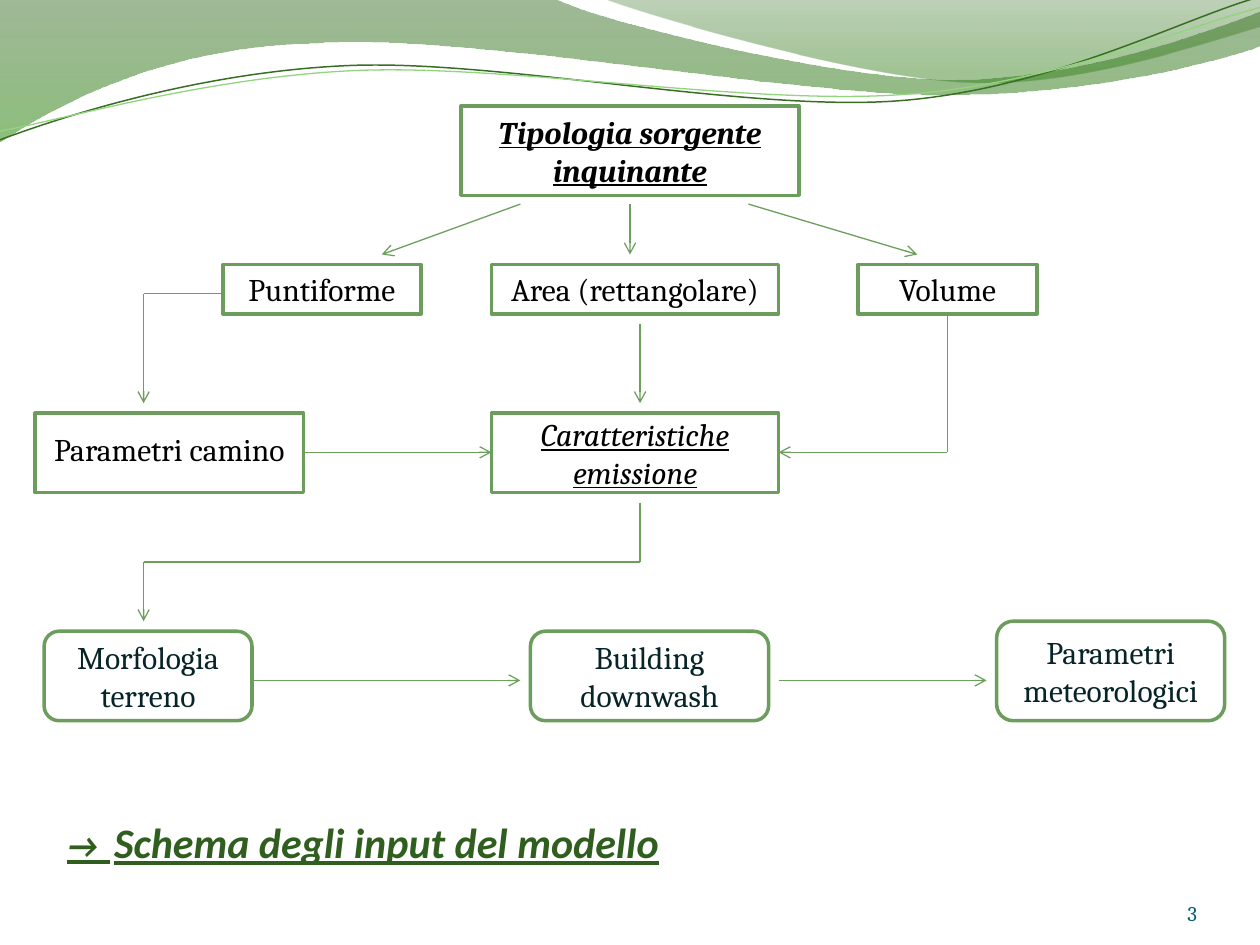
"""Build a slide that charts the inputs of a pollutant dispersion model."""
from dataclasses import dataclass
from itertools import chain, pairwise
from math import cos, radians, sin

from lxml import etree
from pptx import Presentation
from pptx.dml.color import RGBColor
from pptx.enum.shapes import MSO_CONNECTOR, MSO_SHAPE
from pptx.enum.text import MSO_ANCHOR, PP_ALIGN
from pptx.oxml.ns import qn
from pptx.util import Inches, Pt

PROCESS = MSO_SHAPE.FLOWCHART_PROCESS
RECTANGLE = MSO_SHAPE.RECTANGLE
ROUNDED = MSO_SHAPE.ROUNDED_RECTANGLE
STRAIGHT = MSO_CONNECTOR.STRAIGHT
TOP, MIDDLE, BOTTOM = MSO_ANCHOR.TOP, MSO_ANCHOR.MIDDLE, MSO_ANCHOR.BOTTOM
LEFT, CENTER, RIGHT = PP_ALIGN.LEFT, PP_ALIGN.CENTER, PP_ALIGN.RIGHT
WAVE_TILT = -2.7


@dataclass(frozen=True)
class Theme:
    """Colours, fonts and sizes of the slide."""
    body_font: str = "Cambria"
    title_font: str = "Calibri"
    text: str = "000000"
    soft_text: str = "072428"
    title: str = "2F5E1F"
    number: str = "045D75"
    border: str = "6D9D5D"
    arrow: str = "6C9E5C"
    dark_wave: str = "386F24"
    light_wave: str = "93D47E"
    box_size: int = 18
    title_size: int = 24
    mark_size: int = 20
    number_size: int = 12
    border_width: float = 2
    arrow_width: float = 0.75


THEME = Theme()
EMPHASIS = {"bold": True, "italic": True, "underline": True}
STRESS = {"italic": True, "underline": True}

FILLED_WAVES = [
    ((0, 0),
     [[(4.4, -0.01)],
      [(4.76, 0.17), (6.64, 0.63), (7.58, 0.63)],
      [(8.53, 0.63), (9.58, 0.26), (10, 0.09)],
      [(10.01, 0.36)],
      [(9.83, 0.44), (8.7, 0.76), (7.46, 0.75)],
      [(6.22, 0.75), (3.82, 0.28), (2.57, 0.34)],
      [(1.29, 0.36), (0.46, 0.83), (-0.01, 1.13)],
      [(0, 0)]],
     [(0, "2C6418", 45), (100, "2F8810", 55)]),
    ((4.79, -0.01),
     [[(5.09, 0.11), (6.82, 0.62), (7.69, 0.65)],
      [(8.56, 0.69), (9.61, 0.32), (10, 0.21)],
      [(10, 0)],
      [(4.79, -0.01)]],
     [(0, "2A6715", 30), (80, "307E15", 45)]),
]
LINE_WAVES = [
    ((0, 1.11),
     [[(0.48, 0.93), (1.58, 0.57), (2.77, 0.52)],
      [(3.95, 0.47), (5.93, 0.89), (7.13, 0.8)],
      [(8.33, 0.71), (9.38, 0.15), (9.98, -0.02)]], (4.99, 0.58), THEME.dark_wave, 0.85),
    ((0, 1.04),
     [[(0.47, 0.96), (1.64, 0.61), (2.83, 0.56)],
      [(4.03, 0.51), (5.97, 0.84), (7.17, 0.75)],
      [(8.36, 0.67), (9.41, 0.21), (10, 0.06)]], (5, 0.59), THEME.light_wave, 0.75),
]
BOXES = [
    (PROCESS, (3.66, 0.84, 2.68, 0.71), "Tipologia sorgente inquinante", THEME.text, EMPHASIS),
    (PROCESS, (1.77, 2.1, 1.57, 0.39), "Puntiforme", THEME.text, {}),
    (PROCESS, (3.9, 2.1, 2.28, 0.39), "Area (rettangolare)", THEME.text, {}),
    (PROCESS, (6.81, 2.1, 1.42, 0.39), "Volume", THEME.text, {}),
    (RECTANGLE, (0.28, 3.28, 2.13, 0.63), "Parametri camino", THEME.text, {}, 0.11),
    (RECTANGLE, (3.9, 3.28, 2.28, 0.63), "Caratteristiche emissione", THEME.text, STRESS),
    (ROUNDED, (4.21, 5.01, 1.89, 0.71), "Building downwash", THEME.soft_text, {}),
    (ROUNDED, (0.35, 5.01, 1.65, 0.71), "Morfologia terreno", THEME.soft_text, {}),
    (ROUNDED, (7.91, 4.93, 1.81, 0.79), "Parametri meteorologici", THEME.soft_text, {}),
]
ROUTES = [
    [(4.13, 1.62), (3.03, 2.02)],
    [(5, 1.62), (5, 2.02)],
    [(5.94, 1.62), (7.28, 2.02)],
    [(1.77, 2.33), (1.14, 2.33), (1.14, 3.2)],
    [(2.4, 3.59), (3.9, 3.59)],
    [(5.08, 2.57), (5.08, 3.2)],
    [(7.52, 2.49), (7.52, 3.59), (6.18, 3.59)],
    [(5.08, 3.99), (5.08, 4.46), (1.14, 4.46), (1.14, 4.93)],
    [(2.01, 5.4), (4.13, 5.4)],
    [(6.18, 5.4), (7.83, 5.4)],
]


def apply(target, values):
    """Set each attribute named in values on target."""
    for name, value in values.items():
        setattr(target, name, value)


def turn(point, center, degrees):
    """Return a point turned clockwise about a center."""
    angle = radians(degrees)
    across, down = point[0] - center[0], point[1] - center[1]
    return (center[0] + across * cos(angle) - down * sin(angle),
            center[1] + across * sin(angle) + down * cos(angle))


class SlideBuilder:
    """Draw styled elements on one slide."""

    def __init__(self, slide, theme):
        """Keep the slide and its theme."""
        self.slide, self.theme = slide, theme

    def outline(self, shape, color, width):
        """Give a shape a solid line."""
        shape.line.color.rgb = RGBColor.from_string(color)
        shape.line.width = Pt(width)

    def wave(self, start, segments, closed):
        """Add a freeform whose three-point segments are cubic curves."""
        points = [(Inches(x), Inches(y)) for x, y in chain([start], *segments)]
        builder = self.slide.shapes.build_freeform(*points[0])
        builder.add_line_segments(points[1:], close=closed)
        shape = builder.convert_to_shape()
        shape.shadow.inherit = False
        steps = iter(list(shape._element.iter(qn("a:lnTo"))))
        for segment in segments:
            first, *others = [next(steps) for _ in segment]
            if others:
                curve = etree.Element(qn("a:cubicBezTo"))
                first.addprevious(curve)
                for step in (first, *others):
                    curve.append(step[0])
                    step.getparent().remove(step)
        return shape

    def filled_wave(self, start, segments, stops):
        """Add a wave with a translucent vertical gradient."""
        shape = self.wave(start, segments, True)
        shape.line.fill.background()
        shape.fill.gradient()
        shape.fill.gradient_angle = 270
        for stop, (position, color, _) in zip(shape.fill.gradient_stops, stops):
            stop.position = position / 100
            stop.color.rgb = RGBColor.from_string(color)
        colors = shape._element.spPr.iter(qn("a:srgbClr"))
        for element, (_, _, opacity) in zip(colors, stops):
            etree.SubElement(element, qn("a:alpha")).set("val", str(opacity * 1000))

    def line_wave(self, start, segments, center, color, width):
        """Add an open wave line tilted about its center."""
        level = [[turn(point, center, -WAVE_TILT) for point in segment] for segment in segments]
        shape = self.wave(turn(start, center, -WAVE_TILT), level, False)
        shape.rotation = WAVE_TILT
        shape.fill.background()
        self.outline(shape, color, width)

    def run(self, paragraph, text, font, size, color, values):
        """Add a formatted run to a paragraph."""
        run = paragraph.add_run()
        run.text = text
        apply(run.font, {"name": font, "size": Pt(size), **values})
        run.font.color.rgb = RGBColor.from_string(color)
        return run

    def box(self, kind, bounds, text, color, values, bottom=0.05):
        """Add an outlined box with centred text."""
        shape = self.slide.shapes.add_shape(kind, *map(Inches, bounds))
        shape.shadow.inherit = False
        shape.fill.background()
        self.outline(shape, self.theme.border, self.theme.border_width)
        apply(shape.text_frame, {"word_wrap": True, "vertical_anchor": MIDDLE,
                                 "margin_bottom": Inches(bottom)})
        paragraph = shape.text_frame.paragraphs[0]
        paragraph.alignment = CENTER
        self.run(paragraph, text, self.theme.body_font, self.theme.box_size, color, values)

    def route(self, points):
        """Add straight connectors through points, with an arrowhead at the end."""
        for start, end in pairwise(points):
            connector = self.slide.shapes.add_connector(STRAIGHT, *map(Inches, start + end))
            self.outline(connector, self.theme.arrow, self.theme.arrow_width)
            etree.SubElement(connector._element.spPr, qn("a:effectLst"))
        etree.SubElement(connector.line._get_or_add_ln(), qn("a:tailEnd")).set("type", "arrow")

    def text(self, bounds, alignment, values):
        """Add a text box and return its paragraph."""
        frame = self.slide.shapes.add_textbox(*map(Inches, bounds)).text_frame
        apply(frame, {"word_wrap": True, **values})
        frame.paragraphs[0].alignment = alignment
        return frame.paragraphs[0]


def main():
    """Build and save the presentation."""
    presentation = Presentation()
    apply(presentation, {"slide_width": Inches(10), "slide_height": Inches(7.5)})
    builder = SlideBuilder(presentation.slides.add_slide(presentation.slide_layouts[6]), THEME)
    for method, items in ((builder.filled_wave, FILLED_WAVES), (builder.line_wave, LINE_WAVES),
                          (builder.box, BOXES)):
        for item in items:
            method(*item)
    for points in ROUTES:
        builder.route(points)
    title = builder.text((0.43, 6.43, 8.5, 0.5), LEFT, {"vertical_anchor": TOP})
    mark = builder.run(title, "→ ", THEME.title_font, THEME.mark_size, THEME.title, EMPHASIS)
    mark.font._element.set("spc", "225")
    builder.run(title, "Schema degli input del modello", THEME.title_font, THEME.title_size,
                THEME.title, EMPHASIS)
    margins = {f"margin_{side}": 0 for side in ("left", "top", "right", "bottom")}
    number = builder.text((8.67, 6.95, 0.83, 0.4), RIGHT, {"vertical_anchor": BOTTOM, **margins})
    builder.run(number, "3", THEME.body_font, THEME.number_size, THEME.number, {})
    presentation.save("out.pptx")


if __name__ == "__main__":
    main()
